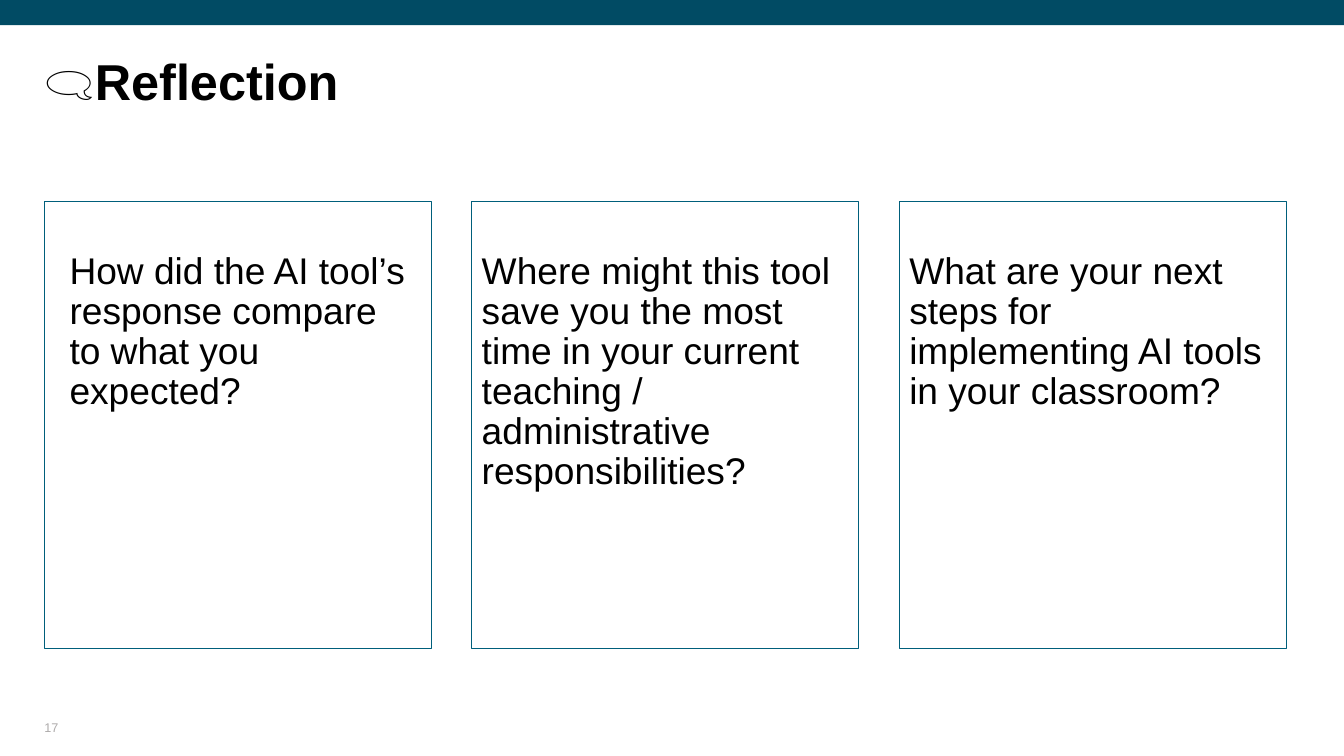
from dataclasses import dataclass

from pptx import Presentation
from pptx import util as u
from pptx.dml.color import RGBColor
from pptx.enum import shapes, text

PX = 9144
COLORS = {"band": "014B64", "border": "005F7B", "ink": "000000", "number": "AEABAB"}
FONT = "Arial"
MARGIN = 44
CARD_TOP, CARD_W, CARD_H, CARD_GAP = 200, 384, 443, 40


@dataclass(frozen=True)
class Label:
    words: str
    size: float
    color: str = "ink"
    bold: bool = False
    spacing: float = 0.9
    insets: tuple[int, int, int, int] = (0, 0, 0, 0)
    anchor: text.MSO_ANCHOR = text.MSO_ANCHOR.TOP


@dataclass(frozen=True)
class Card:
    question: str
    side: int


CARDS = (
    Card("How did the AI tool’s response compare to what you expected?", 25),
    Card("Where might this tool save you the most time in your current "
         "teaching / administrative responsibilities?", 10),
    Card("What are your next steps for implementing AI tools in your classroom?", 10),
)


def px(n: int) -> u.Emu:
    return u.Emu(n * PX)


def rgb(name: str) -> RGBColor:
    return RGBColor.from_string(COLORS[name])


def write(s, label: Label) -> None:
    tf = s.text_frame
    tf.word_wrap = True
    tf.vertical_anchor = label.anchor
    tf.margin_left, tf.margin_top, tf.margin_right, tf.margin_bottom = map(px, label.insets)
    p = tf.paragraphs[0]
    p.text = label.words
    p.alignment = text.PP_ALIGN.LEFT
    p.line_spacing = label.spacing
    p.font.name = FONT
    p.font.size = u.Pt(label.size)
    p.font.bold = label.bold
    p.font.color.rgb = rgb(label.color)


def add_text(slide, x: int, y: int, w: int, h: int, label: Label) -> None:
    write(slide.shapes.add_textbox(px(x), px(y), px(w), px(h)), label)


def add_rect(slide, x: int, y: int, w: int, h: int):
    s = slide.shapes.add_shape(shapes.MSO_SHAPE.RECTANGLE, px(x), px(y), px(w), px(h))
    s.shadow.inherit = False
    return s


def add_band(slide) -> None:
    s = add_rect(slide, 0, 0, 1333, 25)
    s.fill.solid()
    s.fill.fore_color.rgb = rgb("band")
    s.line.fill.background()


def add_card(slide, x: int, card: Card) -> None:
    s = add_rect(slide, x, CARD_TOP, CARD_W, CARD_H)
    s.fill.background()
    s.line.color.rgb = rgb("border")
    s.line.width = u.Pt(0.75)
    write(s, Label(card.question, 26.5, insets=(card.side, 50, card.side, 5)))


def main() -> None:
    prs = Presentation()
    prs.slide_width, prs.slide_height = px(1333), px(750)
    slide = prs.slides.add_slide(prs.slide_layouts[6])
    add_band(slide)
    add_text(slide, MARGIN, 57, 1232, 127, Label("🗨️Reflection", 36, bold=True))
    for i, card in enumerate(CARDS):
        add_card(slide, MARGIN + i * (CARD_W + CARD_GAP), card)
    add_text(slide, MARGIN, 705, 300, 24,
             Label("17", 9, "number", spacing=1.0, anchor=text.MSO_ANCHOR.BOTTOM))
    prs.save("out.pptx")


if __name__ == "__main__":
    main()
